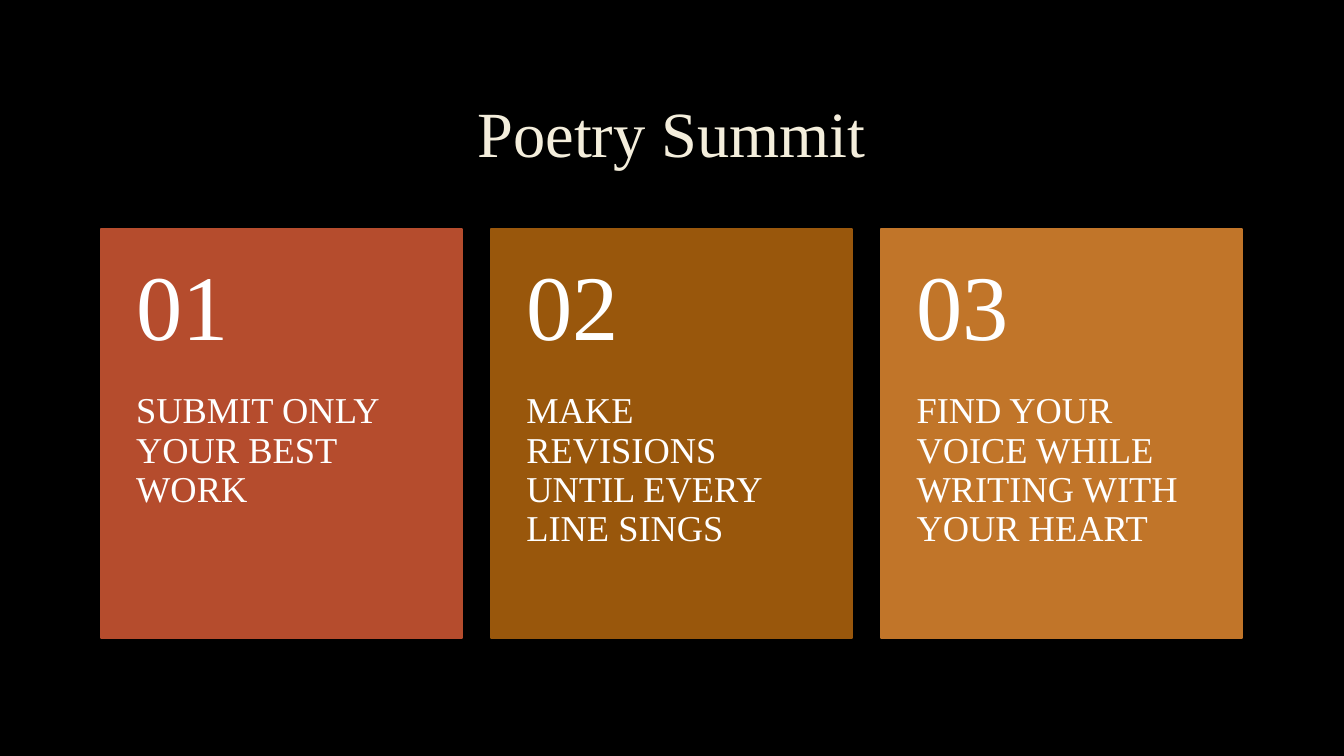
from pptx import Presentation
from pptx.dml.color import RGBColor
from pptx.enum.shapes import MSO_SHAPE as Shape
from pptx.enum.text import MSO_ANCHOR as Anchor, PP_ALIGN as Align
from pptx.util import Inches, Pt

COLORS = {
    "background": "000000",
    "title": "F4EEDC",
    "text": "FFFFFF",
    "rust": "B54C2D",
    "brown": "99570C",
    "ochre": "C17529",
}
CARDS = [
    ("01", "SUBMIT ONLY YOUR BEST WORK", "rust"),
    ("02", "MAKE REVISIONS UNTIL EVERY LINE SINGS", "brown"),
    ("03", "FIND YOUR VOICE WHILE WRITING WITH YOUR HEART", "ochre"),
]
FONT = "Times New Roman"
TITLE_BOX = (1, 0.67, 11.32, 1.38)
CARDS_BOX = (1, 2.27, 11.32, 4.06)
CARD_GAP = 0.29
NUMBER_SHARE = 0.4


def rgb(name):
    """Return the named colour."""
    return RGBColor.from_string(COLORS[name])


def set_all(target, values):
    """Set every attribute in a dict of format values."""
    for name, value in values.items():
        setattr(target, name, value)


def add_text(slide, box, text, size, color, insets, anchor=Anchor.TOP, align=Align.LEFT, after=0):
    """Add one wrapped paragraph in the given box."""
    frame = slide.shapes.add_textbox(*map(Inches, box)).text_frame
    left, top, right, bottom = map(Inches, insets)
    set_all(frame, {
        "word_wrap": True, "vertical_anchor": anchor,
        "margin_left": left, "margin_top": top,
        "margin_right": right, "margin_bottom": bottom,
    })
    paragraph = frame.paragraphs[0]
    set_all(paragraph, {"alignment": align, "line_spacing": 0.9, "space_after": Pt(after)})
    run = paragraph.add_run()
    run.text = text
    set_all(run.font, {"name": FONT, "size": Pt(size)})
    run.font.color.rgb = rgb(color)


def add_title(slide, box):
    """Add the centred slide title."""
    add_text(slide, box, "Poetry Summit", 46, "title", (0.1, 0.05, 0.1, 0.05),
             Anchor.MIDDLE, Align.CENTER)


def add_card(slide, box, number, advice, color):
    """Add a coloured card with its number above its advice."""
    left, top, width, height = box
    card = slide.shapes.add_shape(Shape.RECTANGLE, *map(Inches, box))
    card.shadow.inherit = False
    card.fill.solid()
    card.fill.fore_color.rgb = rgb(color)
    card.line.color.rgb = rgb(color)
    card.line.width = Pt(1.25)
    split = height * NUMBER_SHARE
    add_text(slide, (left, top + split, width, height - split), advice, 26, "text",
             (0.35, 0, 0.35, 0.36), after=9)
    add_text(slide, (left, top, width, split), number, 66, "text",
             (0.35, 0.18, 0.35, 0.18), Anchor.MIDDLE)


def add_cards(slide, box):
    """Lay out the cards in equal columns."""
    left, top, width, height = box
    card_width = (width - CARD_GAP * (len(CARDS) - 1)) / len(CARDS)
    for column, card in enumerate(CARDS):
        card_left = left + column * (card_width + CARD_GAP)
        add_card(slide, (card_left, top, card_width, height), *card)


def main():
    """Build and save the slide."""
    presentation = Presentation()
    set_all(presentation, {"slide_width": Inches(13.33), "slide_height": Inches(7.5)})
    slide = presentation.slides.add_slide(presentation.slide_layouts[6])
    slide.background.fill.solid()
    slide.background.fill.fore_color.rgb = rgb("background")
    add_title(slide, TITLE_BOX)
    add_cards(slide, CARDS_BOX)
    presentation.save("out.pptx")


if __name__ == "__main__":
    main()
